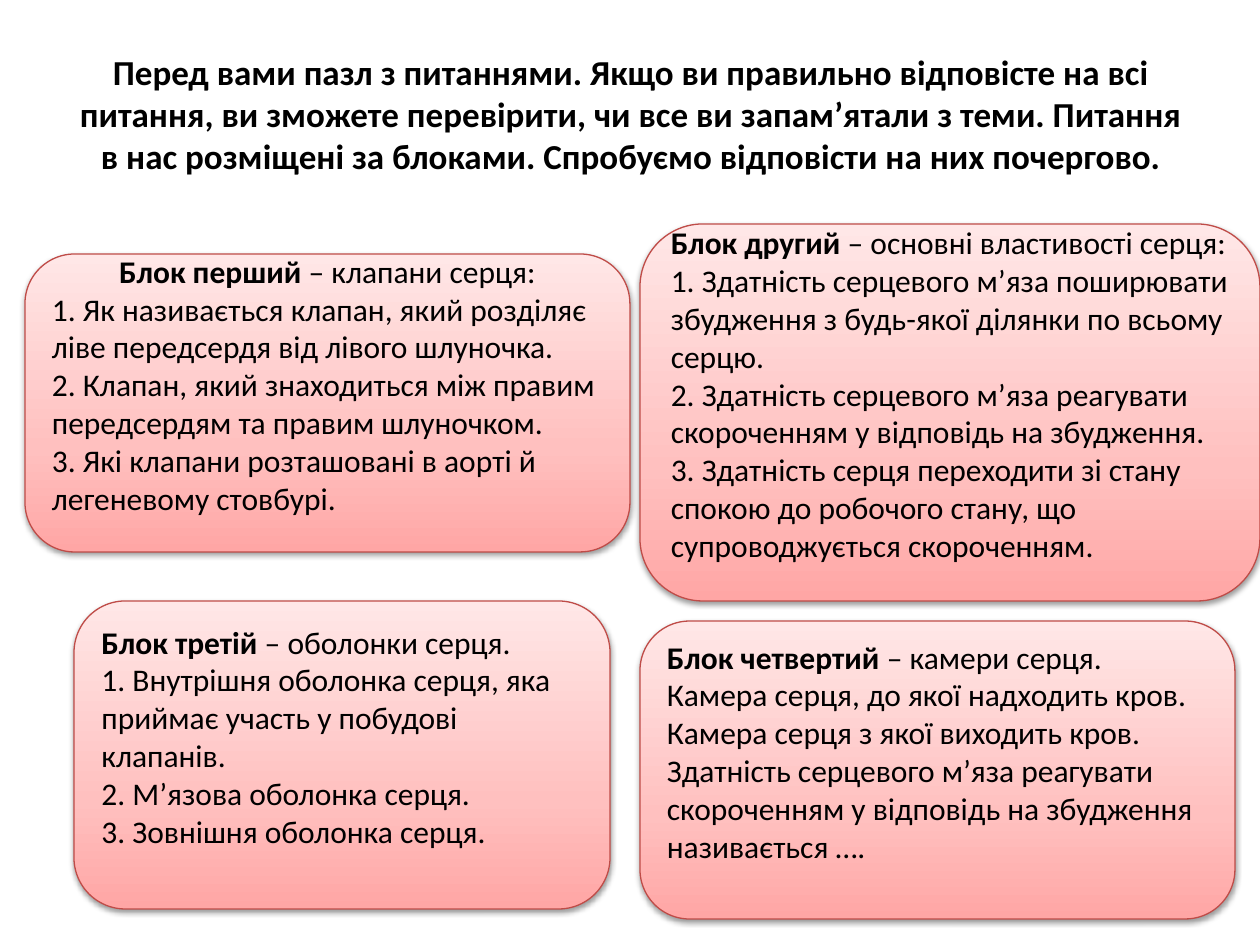
from lxml import etree
from pptx import Presentation
from pptx.dml.color import RGBColor
from pptx.enum.shapes import MSO_SHAPE as SHAPE
from pptx.enum.text import MSO_ANCHOR as ANCHOR, MSO_AUTO_SIZE as AUTO, PP_ALIGN as ALIGN
from pptx.oxml import parse_xml
from pptx.oxml.ns import nsdecls, qn
from pptx.util import Emu, Pt

SCALE = 914400 / 126
STOPS = [(0, "FFA6A5"), (35, "FFC0BF"), (100, "FFE7E7")]
TITLE = ("Перед вами пазл з питаннями. Якщо ви правильно відповісте на всі питання, "
         "ви зможете перевірити, чи все ви запам’ятали з теми. Питання в нас розміщені "
         "за блоками. Спробуємо відповісти на них почергово.")
BLOCKS = [
    ((25, 254, 605, 298), ALIGN.CENTER, "Блок перший", " – клапани серця:", [
        "1. Як називається клапан, який розділяє ліве передсердя від лівого шлуночка.",
        "2. Клапан, який знаходиться між правим передсердям та правим шлуночком.",
        "3. Які клапани розташовані в аорті й легеневому стовбурі."]),
    ((74, 601, 536, 308), ALIGN.LEFT, "Блок третій", " – оболонки серця.", [
        "1. Внутрішня оболонка серця, яка приймає участь у побудові клапанів.",
        "2. М’язова оболонка серця.",
        "3. Зовнішня оболонка серця."]),
    ((640, 224, 620, 377), ALIGN.LEFT, "Блок другий", " – основні властивості серця:", [
        "1. Здатність серцевого м’яза поширювати збудження з будь-якої ділянки по всьому серцю.",
        "2. Здатність серцевого м’яза реагувати скороченням у відповідь на збудження.",
        "3. Здатність серця переходити зі стану спокою до робочого стану, "
        "що супроводжується скороченням."]),
    ((640, 621, 595, 298), ALIGN.LEFT, "Блок четвертий", " – камери серця.", [
        "Камера серця, до якої надходить кров.",
        "Камера серця з якої виходить кров.",
        "Здатність серцевого м’яза реагувати скороченням у відповідь на збудження "
        "називається …."]),
]


def px(n):
    return Emu(round(n * SCALE))


def color(value):
    return RGBColor.from_string(value)


def add_text(p, text, size=18, bold=False, align=ALIGN.LEFT):
    p.alignment = align
    r = p.add_run()
    r.text = text
    r.font.name = "Calibri"
    r.font.size = Pt(size)
    r.font.bold = bold
    r.font.color.rgb = color("000000")


def set_frame(tf, bottom):
    tf.word_wrap = True
    tf.auto_size = AUTO.NONE
    tf.vertical_anchor = ANCHOR.MIDDLE
    tf.margin_bottom = px(bottom)


def set_gradient(sp):
    sp.fill.gradient()
    sp.fill.gradient_angle = 90
    stops = sp._element.spPr.find(qn("a:gradFill")).find(qn("a:gsLst"))
    for old in list(stops):
        stops.remove(old)
    for pos, value in STOPS:
        gs = etree.SubElement(stops, qn("a:gs"), pos=str(pos * 1000))
        etree.SubElement(gs, qn("a:srgbClr"), val=value)


def set_shadow(sp):
    sp.shadow.inherit = False
    sp._element.spPr.find(qn("a:effectLst")).append(parse_xml(
        f'<a:outerShdw {nsdecls("a")} blurRad="40000" dist="20000" dir="5400000" '
        'rotWithShape="0"><a:srgbClr val="000000"><a:alpha val="38000"/>'
        '</a:srgbClr></a:outerShdw>'))


def add_title(slide):
    sp = slide.shapes.title
    sp.left, sp.top, sp.width, sp.height = map(px, (64, 55, 1134, 158))
    set_frame(sp.text_frame, 48)
    add_text(sp.text_frame.paragraphs[0], TITLE, size=20, bold=True, align=ALIGN.CENTER)


def add_block(slide, box, align, name, topic, lines):
    sp = slide.shapes.add_shape(SHAPE.ROUNDED_RECTANGLE, *map(px, box))
    set_gradient(sp)
    sp.line.color.rgb = color("BF4C48")
    sp.line.width = Pt(0.75)
    set_shadow(sp)
    tf = sp.text_frame
    set_frame(tf, 44)
    add_text(tf.paragraphs[0], name, bold=True, align=align)
    add_text(tf.paragraphs[0], topic, align=align)
    for line in lines:
        add_text(tf.add_paragraph(), line)


def main():
    prs = Presentation()
    prs.slide_width, prs.slide_height = px(1260), px(945)
    slide = prs.slides.add_slide(prs.slide_layouts[5])
    add_title(slide)
    for block in BLOCKS:
        add_block(slide, *block)
    prs.save("out.pptx")


if __name__ == "__main__":
    main()
